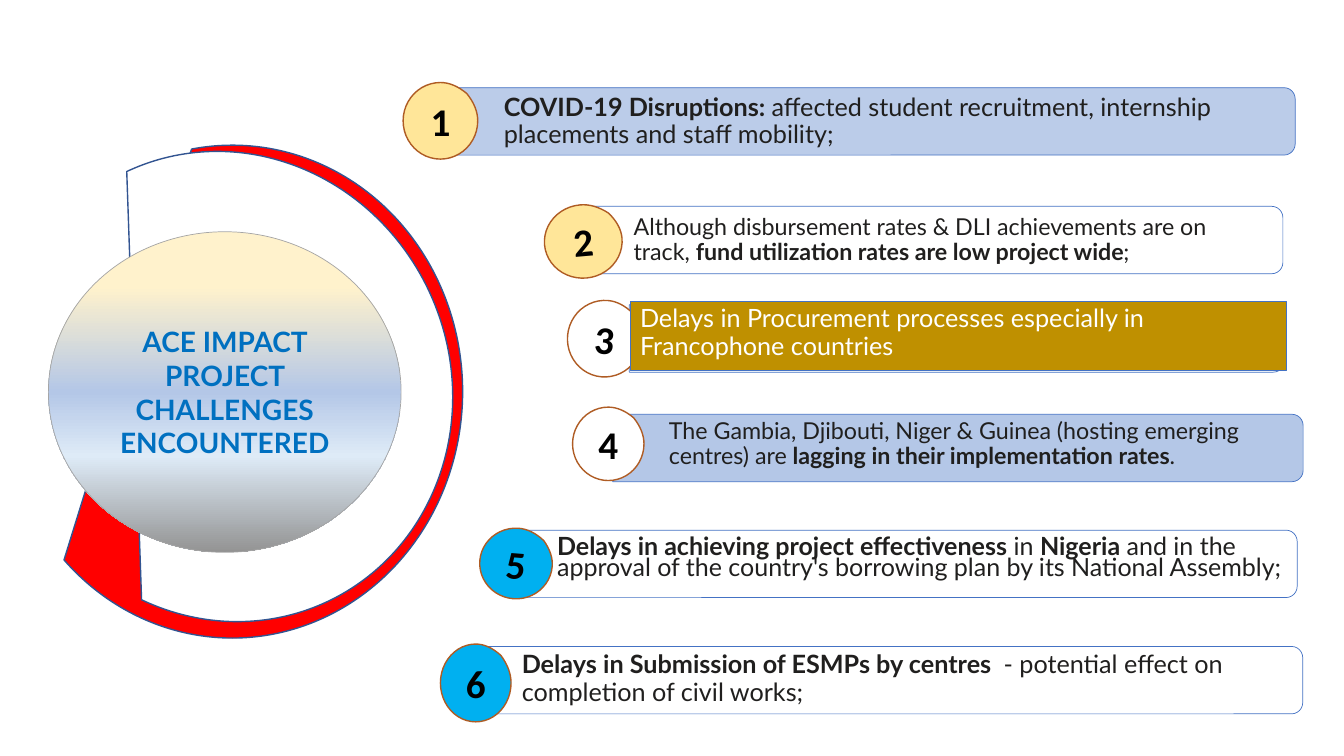
from pptx import Presentation
from pptx.dml.color import RGBColor
from pptx.enum.shapes import MSO_SHAPE
from pptx.enum.text import MSO_ANCHOR, PP_ALIGN
from pptx.oxml.ns import qn
from pptx.util import Cm, Pt
from lxml import etree

CHORD, OVAL, RECT = MSO_SHAPE.CHORD, MSO_SHAPE.OVAL, MSO_SHAPE.RECTANGLE
DROP, BAR = MSO_SHAPE.TEAR, MSO_SHAPE.ROUND_2_SAME_RECTANGLE
TOP, MIDDLE = MSO_ANCHOR.TOP, MSO_ANCHOR.MIDDLE
LEFT, CENTER = PP_ALIGN.LEFT, PP_ALIGN.CENTER

HUES = {
    "white": "FFFFFF", "black": "000000", "ink": "201F1E", "red": "FF0000",
    "navy": "325491", "blue": "4472C4", "pale": "B4C7E7", "sky": "00B0F0",
    "sand": "FFE699", "rust": "AF5C24", "gold": "BF9000", "head": "0070C0",
    "cream": "FFF2CC", "ice": "DEEBF7", "grey": "939393", "rim": "A5A5A5",
}

# Content: boxes are left, top, width, height in cm; runs are (text, bold)
HUB = "ACE IMPACT PROJECT CHALLENGES ENCOUNTERED"
HUB_BOX = (1.22, 5.84, 8.89, 8.08)
BANDS = [(17, "cream"), (50, "pale"), (70, "ice"), (100, "grey")]
ARCS = [
    {"box": (0.05, 3.66, 11.61, 12.42), "fill": "red", "turn": 0, "ends": (27, 167.72)},
    {"box": (0.1, 3.76, 11.25, 11.96), "fill": "white", "turn": 336.4,
     "ends": (26.72, 162.87)},
]
BAR_H = 1.7
ITEMS = [
    {"bar": (10.72, 2.21, 21.92), "fill": "pale", "alpha": 90,
     "badge": (10.16, 2.08, 1.88, 1.93), "hue": "sand", "turn": 0,
     "box": (12.45, 2.26, 20.14, 1.75), "size": 18,
     "runs": [("COVID-19 Disruptions: ", True),
              ("affected student recruitment, internship placements and staff mobility;", False)]},
    {"bar": (14.83, 5.2, 17.5), "fill": "white", "alpha": 90,
     "badge": (13.72, 5.16, 1.96, 1.85), "hue": "sand", "turn": 355,
     "box": (15.72, 5.31, 15.72, 1.75), "size": 16.6,
     "runs": [("Although disbursement rates & DLI achievements are on track, ", False),
              ("fund utilization rates are low project wide", True), (";", False)]},
    {"bar": (15.86, 7.68, 16.51), "fill": "white", "alpha": 100,
     "badge": (14.3, 7.57, 1.88, 1.93), "hue": "white", "turn": 5.1,
     "box": (15.88, 7.59, 16.54, 1.75), "size": 18, "panel": "gold",
     "runs": [("Delays in Procurement processes especially in Francophone countries", False)]},
    {"bar": (15.44, 10.44, 17.4), "fill": "pale", "alpha": 100,
     "badge": (14.43, 10.26, 1.8, 1.85), "hue": "white", "turn": 0,
     "box": (16.61, 10.44, 15.95, 1.75), "size": 16.6,
     "runs": [("The Gambia, Djibouti, Niger & Guinea (hosting emerging centres) are ", False),
              ("lagging in their implementation rates", True), (".", False)]},
    {"bar": (13.0, 13.36, 19.69), "fill": "white", "alpha": 90,
     "badge": (12.09, 13.31, 1.83, 1.78), "hue": "sky", "turn": 4.6,
     "box": (13.79, 13.46, 19.2, 2.08), "size": 17.9, "space": 0.7,
     "runs": [("Delays in achieving project effectiveness ", True), ("in ", False),
              ("Nigeria", True),
              (" and in the approval of the country's borrowing plan by its "
               "National Assembly;", False)]},
    {"bar": (11.75, 16.29, 21.08), "fill": "white", "alpha": 90,
     "badge": (11.1, 16.23, 1.78, 1.96), "hue": "sky", "turn": 0,
     "box": (12.9, 16.31, 19.43, 1.9), "size": 18,
     "runs": [("Delays in Submission of ESMPs by centres  ", True),
              ("- potential effect on completion of civil works;", False)]},
]

deck = Presentation()
deck.slide_width, deck.slide_height = Cm(33.87), Cm(19.05)
slide = deck.slides.add_slide(deck.slide_layouts[6])


def paint(name):
    return RGBColor.from_string(HUES[name])


def draw(kind, box, fill, line, width, turn=0, adj=(), alpha=100):
    shape = slide.shapes.add_shape(kind, *map(Cm, box))
    shape.shadow.inherit = False
    shape.rotation = turn
    for i, val in enumerate(adj):
        shape.adjustments[i] = val
    shape.fill.solid()
    shape.fill.fore_color.rgb = paint(fill)
    if alpha < 100:
        tint = shape._element.spPr.find(qn("a:solidFill"))[0]
        etree.SubElement(tint, qn("a:alpha"), val=str(alpha * 1000))
    shape.line.color.rgb = paint(line)
    shape.line.width = Pt(width)
    return shape


def write(shape, runs, size, hue, font="Lato", align=LEFT, anchor=TOP, space=None):
    frame = shape.text_frame
    frame.word_wrap = True
    frame.vertical_anchor = anchor
    para = frame.paragraphs[0]
    para.alignment = align
    para.line_spacing = space
    for text, bold in runs:
        run = para.add_run()
        run.text = text
        run.font.name, run.font.size, run.font.bold = font, Pt(size), bold
        run.font.color.rgb = paint(hue)


# Arcs around the hub
for arc in ARCS:
    shape = draw(CHORD, arc["box"], arc["fill"], "navy", 1, arc["turn"], arc["ends"])
    shape._element.spPr.find(qn("a:xfrm")).set("flipH", "1")

# Hub with its vertical gradient
hub = draw(OVAL, HUB_BOX, "pale", "rim", 0.5)
hub.fill.gradient()
hub.fill.gradient_angle = 270
stops = hub._element.spPr.find(qn("a:gradFill")).find(qn("a:gsLst"))
for stop in list(stops):
    stops.remove(stop)
for pos, name in BANDS:
    stop = etree.SubElement(stops, qn("a:gs"), pos=str(pos * 1000))
    etree.SubElement(stop, qn("a:srgbClr"), val=HUES[name])
write(hub, [(HUB, True)], 20, "head", align=CENTER, anchor=MIDDLE)

# Numbered items: bar, badge, text
for num, item in enumerate(ITEMS, 1):
    x, y, w = item["bar"]
    shift = (w - BAR_H) / 2  # the bar stands upright, then turns a quarter
    draw(BAR, (x + shift, y - shift, BAR_H, w), item["fill"], "blue", 0.5,
         turn=90, alpha=item["alpha"])

    badge = draw(DROP, item["badge"], item["hue"], "rust", 1, item["turn"], (0.71,))
    write(badge, [(str(num), True)], 28, "black", "Calibri", CENTER, MIDDLE)

    if "panel" in item:
        label, hue = draw(RECT, item["box"], item["panel"], "blue", 0.75), "white"
    else:
        label, hue = slide.shapes.add_textbox(*map(Cm, item["box"])), "ink"
    write(label, item["runs"], item["size"], hue, space=item.get("space", 0.9))

deck.save("out.pptx")
